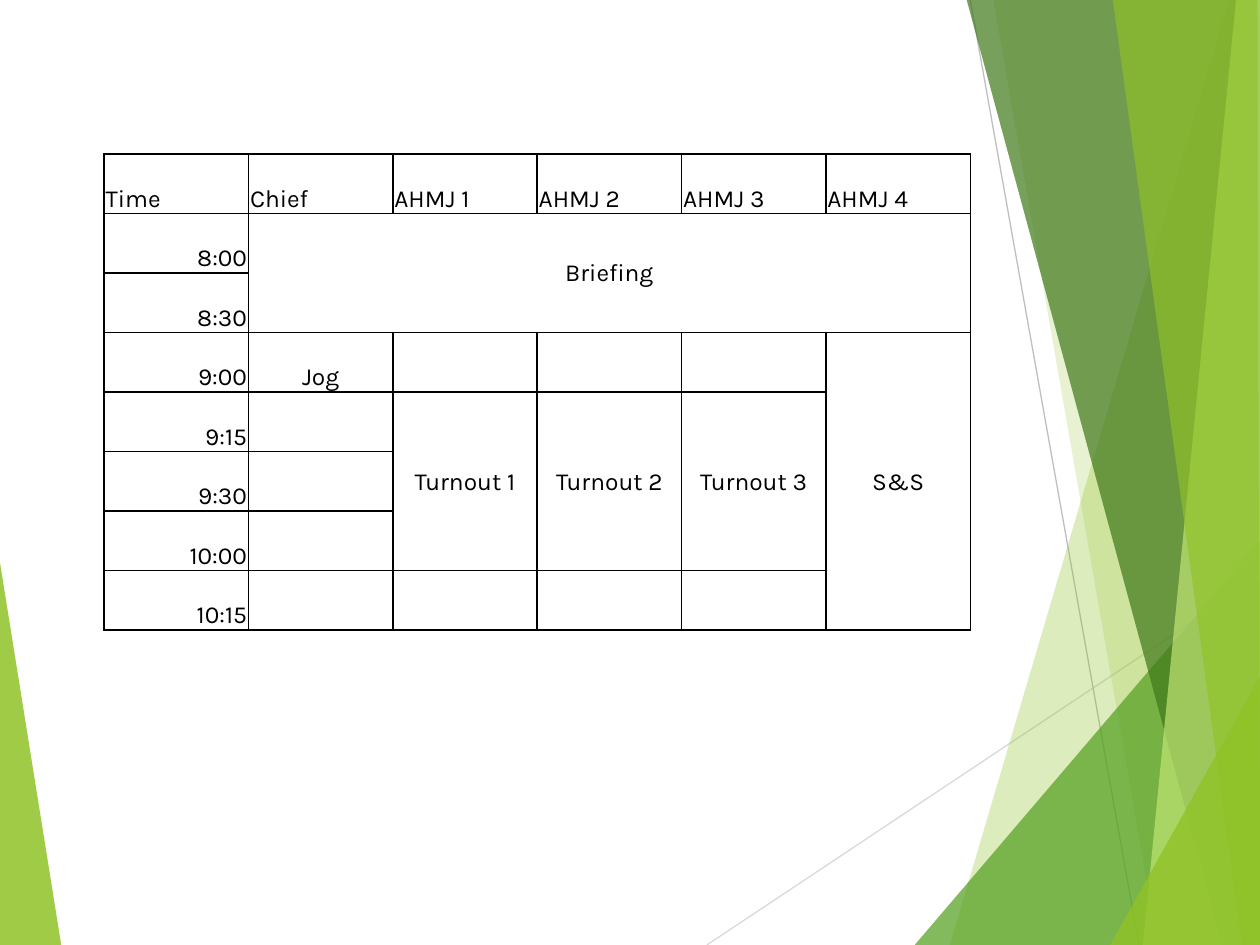
from dataclasses import dataclass

from lxml.etree import SubElement
from pptx import Presentation
from pptx.dml.color import RGBColor
from pptx.enum.shapes import MSO_CONNECTOR as Connector
from pptx.enum.text import MSO_ANCHOR as Anchor, PP_ALIGN as Align
from pptx.oxml.ns import qn
from pptx.slide import Slide
from pptx.table import Table, _Cell as Cell
from pptx.util import Cm, Pt


@dataclass(frozen=True)
class Theme:
    """Colours, type and line sizes of the page."""

    leaf: str = "90C226"
    grass: str = "54A021"
    forest: str = "3F7819"
    lime: str = "C0E474"
    pale_line: str = "D9D9D9"
    grey_line: str = "BFBFBF"
    ink: str = "000000"
    font: str = "Karla"
    text_size: float = 14
    border: float = 1
    hairline: float = 0.75


@dataclass(frozen=True)
class Facet:
    """A translucent polygon with corners in centimetres."""

    colour: str
    opacity: int
    corners: tuple[tuple[float, float], ...]


@dataclass(frozen=True)
class Ray:
    """A thin straight line with ends in centimetres."""

    colour: str
    start: tuple[float, float]
    end: tuple[float, float]


@dataclass(frozen=True)
class Entry:
    """A timetable text with its place, span and alignment."""

    row: int
    column: int
    text: str
    rows: int = 1
    columns: int = 1
    align: Align = Align.CENTER
    anchor: Anchor = Anchor.MIDDLE


THEME = Theme()
WIDTH, HEIGHT = 25.4, 19.05
EDGE, TOP = 25.43, -0.03
COLUMN_WIDTH, ROW_HEIGHT = 2.91, 1.2

LEFT_FACET = Facet(THEME.leaf, 85, ((-0.03, 11.15), (1.24, 19.08), (-0.03, HEIGHT)))
RAYS = (
    Ray(THEME.pale_line, (14.25, HEIGHT), (EDGE, 11.61)),
    Ray(THEME.grey_line, (19.56, 0), (22.96, HEIGHT)),
)
RIGHT_FACETS = (
    Facet(THEME.leaf, 30, ((24.77, 0), (19.15, HEIGHT), (EDGE, HEIGHT), (EDGE, 0))),
    Facet(THEME.leaf, 20, ((20.02, TOP), (23.34, HEIGHT), (EDGE, HEIGHT), (EDGE, TOP))),
    Facet(THEME.grass, 72, ((18.44, HEIGHT), (WIDTH, 10.9), (EDGE, HEIGHT))),
    Facet(THEME.forest, 70, ((19.48, TOP), (24.64, HEIGHT), (EDGE, HEIGHT), (EDGE, TOP))),
    Facet(THEME.lime, 70, ((24.92, TOP), (23.04, HEIGHT), (EDGE, HEIGHT), (WIDTH, TOP))),
    Facet(THEME.leaf, 65, ((22.43, TOP), (25.04, HEIGHT), (WIDTH, HEIGHT), (25.35, TOP))),
    Facet(THEME.leaf, 80, ((22.38, HEIGHT), (EDGE, 13.59), (EDGE, HEIGHT))),
)

HEADINGS = ("Time", "Chief", "AHMJ 1", "AHMJ 2", "AHMJ 3", "AHMJ 4")
TIMES = ("8:00", "8:30", "9:00", "9:15", "9:30", "10:00", "10:15")
ENTRIES = (
    *(Entry(0, column, text, align=Align.LEFT, anchor=Anchor.BOTTOM)
      for column, text in enumerate(HEADINGS)),
    *(Entry(row, 0, text, align=Align.RIGHT, anchor=Anchor.BOTTOM)
      for row, text in enumerate(TIMES, 1)),
    Entry(1, 1, "Briefing", rows=2, columns=5),
    Entry(3, 1, "Jog", anchor=Anchor.BOTTOM),
    *(Entry(4, number + 1, f"Turnout {number}", rows=3) for number in (1, 2, 3)),
    Entry(3, 5, "S&S", rows=5),
)


def draw_facet(page: Slide, facet: Facet) -> None:
    """Draw one translucent polygon."""
    first, *rest = [(Cm(x), Cm(y)) for x, y in facet.corners]
    builder = page.shapes.build_freeform(*first)
    builder.add_line_segments(rest, close=True)
    shape = builder.convert_to_shape()
    shape.shadow.inherit = False
    shape.line.fill.background()
    shape.fill.solid()
    shape.fill.fore_color.rgb = RGBColor.from_string(facet.colour)
    colour = shape.fill._xPr.find(qn("a:solidFill"))[0]
    SubElement(colour, qn("a:alpha"), val=str(facet.opacity * 1000))


def draw_ray(page: Slide, ray: Ray) -> None:
    """Draw one thin line."""
    ends = [Cm(value) for value in ray.start + ray.end]
    line = page.shapes.add_connector(Connector.STRAIGHT, *ends)
    line.line.color.rgb = RGBColor.from_string(ray.colour)
    line.line.width = Pt(THEME.hairline)
    SubElement(line._element.spPr, qn("a:effectLst"))


def format_cell(cell: Cell) -> None:
    """Give a cell narrow margins, a full border and no fill."""
    cell.margin_left = cell.margin_right = cell.margin_top = Cm(0.03)
    cell.margin_bottom = 0
    properties = cell._tc.get_or_add_tcPr()
    for side in ("lnL", "lnR", "lnT", "lnB"):
        border = SubElement(properties, qn(f"a:{side}"), w=str(Pt(THEME.border)))
        fill = SubElement(border, qn("a:solidFill"))
        SubElement(fill, qn("a:srgbClr"), val=THEME.ink)
    cell.fill.background()


def write_entry(table: Table, entry: Entry) -> None:
    """Merge the cells of an entry and write its text."""
    cell = table.cell(entry.row, entry.column)
    if entry.rows * entry.columns > 1:
        last_row = entry.row + entry.rows - 1
        last_column = entry.column + entry.columns - 1
        cell.merge(table.cell(last_row, last_column))
    cell.vertical_anchor = entry.anchor
    para = cell.text_frame.paragraphs[0]
    para.alignment = entry.align
    span = para.add_run()
    span.text = entry.text
    span.font.name = THEME.font
    span.font.size = Pt(THEME.text_size)
    span.font.color.rgb = RGBColor.from_string(THEME.ink)


def draw_timetable(page: Slide) -> None:
    """Draw the timetable with all its entries."""
    rows, columns = len(TIMES) + 1, len(HEADINGS)
    box = page.shapes.add_table(
        rows, columns, Cm(2.1), Cm(3.1), Cm(COLUMN_WIDTH * columns), Cm(ROW_HEIGHT * rows)
    )
    table = box.table
    table.first_row = table.horz_banding = False
    for column in table.columns:
        column.width = Cm(COLUMN_WIDTH)
    for row in table.rows:
        row.height = Cm(ROW_HEIGHT)
    for cell in table.iter_cells():
        format_cell(cell)
    for entry in ENTRIES:
        write_entry(table, entry)


def main() -> None:
    """Build the deck and save it."""
    deck = Presentation()
    deck.slide_width, deck.slide_height = Cm(WIDTH), Cm(HEIGHT)
    page = deck.slides.add_slide(deck.slide_layouts[6])
    draw_facet(page, LEFT_FACET)
    for ray in RAYS:
        draw_ray(page, ray)
    for facet in RIGHT_FACETS:
        draw_facet(page, facet)
    draw_timetable(page)
    deck.save("out.pptx")


if __name__ == "__main__":
    main()
